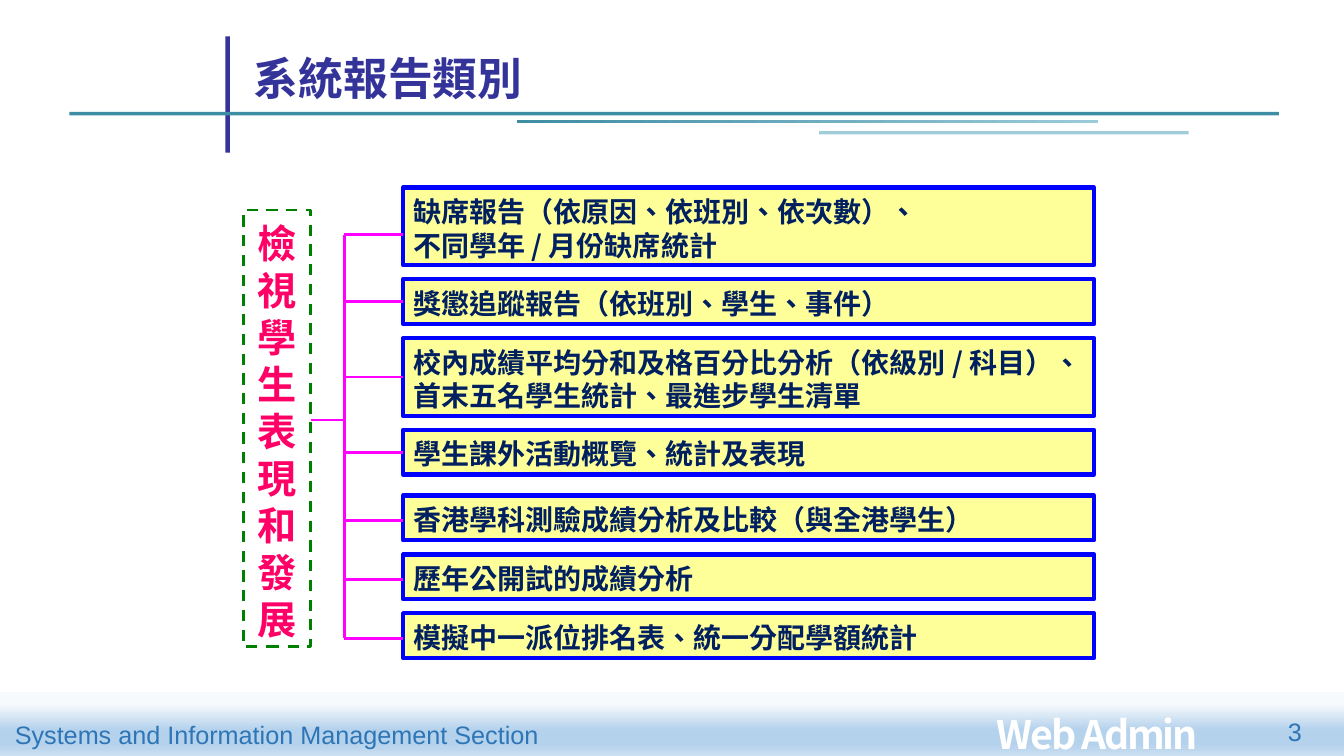
import pptx
import pptx.dml.color
import pptx.enum.dml
import pptx.enum.shapes
import pptx.enum.text
import pptx.oxml
import pptx.oxml.ns
import pptx.util
from dataclasses import dataclass

Pt = pptx.util.Pt
RGB = pptx.dml.color.RGBColor.from_string
RECT = pptx.enum.shapes.MSO_SHAPE.RECTANGLE
STRAIGHT = pptx.enum.shapes.MSO_CONNECTOR.STRAIGHT
ALIGN = pptx.enum.text.PP_ALIGN
ANCHOR = pptx.enum.text.MSO_ANCHOR


@dataclass(frozen=True)
class Theme:
    latin: str = "Arial"
    cjk: str = "Noto Sans CJK SC"
    navy: str = "333399"
    teal: str = "3F8DA5"
    pale_teal: str = "A1CDDB"
    footer: str = "2E75B6"
    white: str = "FFFFFF"
    report_fill: str = "FFFF99"
    report_edge: str = "0000FF"
    report_text: str = "002060"
    topic_edge: str = "008000"
    topic_text: str = "FF0066"
    branch: str = "FF00FF"
    title_size: int = 32
    topic_size: int = 28
    report_size: int = 20
    footer_size: int = 18
    rule_stops: tuple = ((0, "3F8DA5"), (100, "9BCAD9"))
    band_stops: tuple = ((18, "F7FAFD"), (58, "B5D2EC"),
                         (81, "B5D2EC"), (100, "CEE1F2"))


THEME = Theme()

# Each report: lines of text, and how far its branch sits below the middle
REPORTS = [
    (["缺席報告（依原因、依班別、依次數）、", "不同學年 / 月份缺席統計"], 6),
    (["獎懲追蹤報告（依班別、學生、事件）"], 0),
    (["校內成績平均分和及格百分比分析（依級別 / 科目）、首末五名學生統計、最進步學生清單"], 0),
    (["學生課外活動概覽、統計及表現"], 0),
    (["香港學科測驗成績分析及比較（與全港學生）"], 2),
    (["歷年公開試的成績分析"], 2),
    (["模擬中一派位排名表、統一分配學額統計"], 2),
]
TWO_LINE_ROWS = (0, 2)
WIDE_GAP_ROW = 4


def write(shape, lines, color, size, cjk=True, align=ALIGN.LEFT, top=3.6,
          bottom=3.6, anchor=ANCHOR.TOP, wrap=True, tracking=0):
    """Fill a shape with paragraphs in one text style."""
    frame = shape.text_frame
    frame_format = {"word_wrap": wrap, "vertical_anchor": anchor,
                    "margin_left": Pt(7.2), "margin_right": Pt(7.2),
                    "margin_top": Pt(top), "margin_bottom": Pt(bottom)}
    for name, value in frame_format.items():
        setattr(frame, name, value)
    font_format = {"name": THEME.cjk if cjk else THEME.latin,
                   "size": Pt(size), "bold": cjk}
    for index, line in enumerate(lines):
        paragraph = frame.paragraphs[0] if index == 0 else frame.add_paragraph()
        paragraph.alignment = align
        if cjk:
            paragraph.line_spacing = Pt(size * 1.2)
        run = paragraph.add_run()
        run.text = line
        for name, value in font_format.items():
            setattr(run.font, name, value)
        run.font.color.rgb = RGB(color)
        if cjk:
            properties = run.font._element
            properties.set("lang", "zh-TW")
            if tracking:
                properties.set("spc", str(int(tracking * 100)))
            east_asian = pptx.oxml.parse_xml(
                f'<a:ea {pptx.oxml.ns.nsdecls("a")} typeface="{THEME.cjk}"/>')
            properties.find(pptx.oxml.ns.qn("a:latin")).addnext(east_asian)


def add_rect(slide, box, fill=None, edge=None, width=0, stops=None, angle=0):
    """Rectangle with a plain, graded or empty fill."""
    rect = slide.shapes.add_shape(RECT, *map(Pt, box))
    rect.shadow.inherit = False
    if stops:
        rect.fill.gradient()
        gradient = rect._element.spPr.find(pptx.oxml.ns.qn("a:gradFill"))
        colours = "".join(f'<a:gs pos="{pos * 1000}"><a:srgbClr val="{c}"/></a:gs>'
                          for pos, c in stops)
        gradient.getparent().replace(gradient, pptx.oxml.parse_xml(
            f'<a:gradFill {pptx.oxml.ns.nsdecls("a")}><a:gsLst>{colours}</a:gsLst>'
            f'<a:lin ang="{angle * 60000}" scaled="0"/></a:gradFill>'))
    elif fill:
        rect.fill.solid()
        rect.fill.fore_color.rgb = RGB(fill)
    else:
        rect.fill.background()
    if edge:
        rect.line.color.rgb = RGB(edge)
        rect.line.width = Pt(width)
    else:
        rect.line.fill.background()
    return rect


def add_branch(slide, x1, y1, x2, y2):
    line = slide.shapes.add_connector(STRAIGHT, Pt(x1), Pt(y1), Pt(x2), Pt(y2))
    line.line.color.rgb = RGB(THEME.branch)
    line.line.width = Pt(2)
    line._element.spPr.append(pptx.oxml.parse_xml(
        f'<a:effectLst {pptx.oxml.ns.nsdecls("a")}/>'))
    return line


def build_header(slide, box):
    left, top, width, height = box
    # Crossing bar and rules
    add_rect(slide, (left + 111.5, top, 3.2, height), THEME.navy)
    add_rect(slide, (left, top + 54, width, 2.4), THEME.teal)
    add_rect(slide, (left + 319.5, top + 59.7, 415.5, 2.5), stops=THEME.rule_stops)
    add_rect(slide, (left + 535.5, top + 67.6, 264, 2.4), THEME.pale_teal)
    # Title
    title = slide.shapes.title
    title_box = {"left": left + 124.5, "top": top - 11, "width": 552, "height": 60}
    for name, value in title_box.items():
        setattr(title, name, Pt(value))
    write(title, ["系統報告類別"], THEME.navy, THEME.title_size,
          bottom=0, anchor=ANCHOR.BOTTOM)


def build_topic(slide, box):
    topic = add_rect(slide, box, edge=THEME.topic_edge, width=2)
    topic.line.dash_style = pptx.enum.dml.MSO_LINE.DASH
    write(topic, ["檢視學生表現和發展"], THEME.topic_text, THEME.topic_size,
          align=ALIGN.CENTER, top=6.5, bottom=0)


def build_reports(slide, box, trunk_x, stem_x, stem_y):
    left, top, width, _ = box
    branch_ys = []
    for row, (lines, drop) in enumerate(REPORTS):
        height = 55.5 if row in TWO_LINE_ROWS else 32
        if row:
            top += 15 if row == WIDE_GAP_ROW else 10
        report = add_rect(slide, (left, top, width, height),
                          THEME.report_fill, THEME.report_edge, 3)
        write(report, lines, THEME.report_text, THEME.report_size, top=5, bottom=2)
        # Branch from the trunk
        y = top + height / 2 + drop
        branch = add_branch(slide, trunk_x, y, left, y)
        if drop == 0:
            branch.end_connect(report, 1)
        branch_ys.append(y)
        top += height
    # Trunk and stem
    add_branch(slide, trunk_x, branch_ys[0], trunk_x, branch_ys[-1])
    add_branch(slide, stem_x, stem_y, trunk_x, stem_y)


def build_footer(slide, box):
    left, top, width, _ = box
    add_rect(slide, box, stops=THEME.band_stops, angle=90)
    section, system, number = (
        slide.shapes.add_textbox(Pt(left + x), Pt(top + y), Pt(w), Pt(h))
        for x, y, w, h in ((3.5, 15.7, 392.5, 29), (705, 9.5, 196.5, 41),
                           (width - 117.5, 13.5, 94.5, 36)))
    write(section, ["Systems and Information Management Section"],
          THEME.footer, THEME.footer_size, cjk=False, wrap=False)
    write(system, ["Web Admin"], THEME.white, THEME.topic_size, tracking=-1.5)
    write(number, ["3"], THEME.footer, THEME.footer_size, cjk=False,
          align=ALIGN.RIGHT)


def main():
    deck = pptx.Presentation()
    deck.slide_width, deck.slide_height = Pt(960), Pt(540)
    slide = deck.slides.add_slide(deck.slide_layouts[5])
    build_footer(slide, (0, 494.5, 960, 46))
    build_header(slide, (49.5, 26, 864, 83))
    build_topic(slide, (174, 150, 48, 312))
    build_reports(slide, (288, 134, 493.5, 336), trunk_x=246, stem_x=222, stem_y=300)
    deck.save("out.pptx")


if __name__ == "__main__":
    main()
